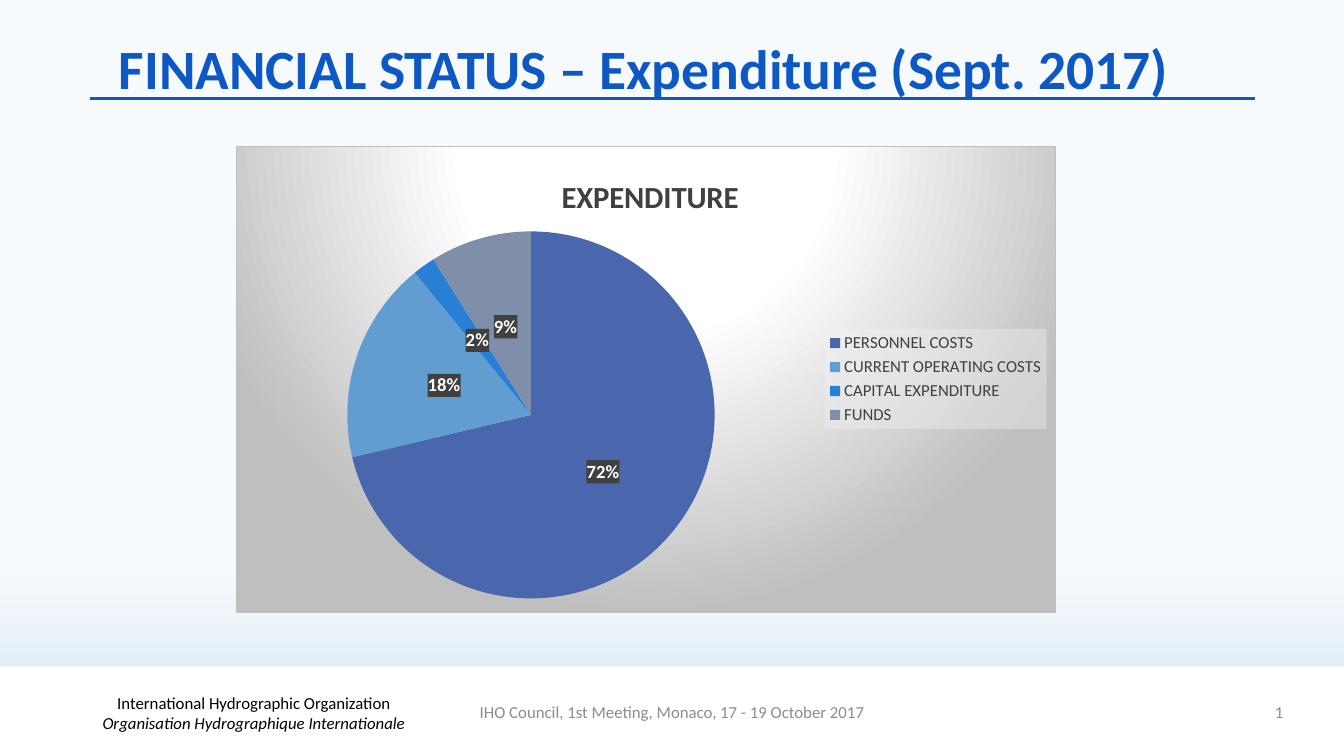
from lxml import etree
from pptx import Presentation
from pptx import util as u
from pptx.chart.data import CategoryChartData
from pptx.dml.color import RGBColor
from pptx.enum import chart as ch, shapes, text
from pptx.oxml import ns, parse_xml

Pt = u.Pt

# Content
TITLE = "FINANCIAL STATUS – Expenditure (Sept. 2017)"
CHART_TITLE = "EXPENDITURE"
EXPENDITURE = [  # category, percent, colour
    ("PERSONNEL COSTS", 72, "4A66AC"),
    ("CURRENT OPERATING COSTS", 18, "629DD1"),
    ("CAPITAL EXPENDITURE", 2, "297FD5"),
    ("FUNDS ", 9, "7F8FA9"),
]
ORGANIZATION = [("International Hydrographic Organization\v", False),
                ("Organisation Hydrographique Internationale", True)]
MEETING = [("IHO Council, 1st Meeting, Monaco, 17 - 19 October 2017", False)]
PAGE_NUMBER = "3"

THEME = {
    "font": "Calibri", "blue": "0E58C4", "white": "FFFFFF", "black": "000000",
    "grey": "8C8C8C", "dark": "404040", "silver": "BFBFBF", "pale": "F2F2F2",
    "sky": [(0.75, "F7FAFD"), (1, "D0E2F1")],
    "title": 39.6, "chart_title": 22, "label": 13.3, "small": 12, "base": 10,
}

# Positions: left, top, width, height
SLIDE = (960, 540)
TITLE_BOX = (77.76, 32.4, 828, 42.5)
CHART_BOX = (168.5, 104.4, 586, 333.4)
FOOTER_BAND = (0, 475.9, 960, 66.2)
ORGANIZATION_BOX = (19.4, 494.6, 324, 28.8)
MEETING_BOX = (318.2, 493.9, 324, 28.8)
NUMBER_BOX = (707.8, 493.9, 216, 28.8)
RULE = (64.1, 70.6, 896.4, 70.6)

# Shares of the chart area
TITLE_LAYOUT = {"x": 0.39, "y": 0.05}
PIE_LAYOUT = {"x": 0.135, "y": 0.182, "w": 0.449, "h": 0.788}
LEGEND_LAYOUT = {"x": 0.718, "y": 0.392, "w": 0.271, "h": 0.214}


def points(values):
    return [Pt(value) for value in values]


def rgb(name):
    return RGBColor.from_string(THEME.get(name, name))


def set_all(target, values):
    for name, value in values.items():
        setattr(target, name, value)


def style_font(font, size, colour, **extra):
    set_all(font, {"name": THEME["font"], "size": Pt(size), **extra})
    font.color.rgb = rgb(colour)


def chart_fill(content):
    return parse_xml(f'<c:spPr {ns.nsdecls("c", "a")}>{content}</c:spPr>')


def solid(colour, alpha):
    return (f'<a:solidFill><a:srgbClr val="{THEME[colour]}">'
            f'<a:alpha val="{alpha * 1000}"/></a:srgbClr></a:solidFill>')


def place(part, layout, inner=False):
    """Give a chart part a manual layout."""
    old = part.find(ns.qn("c:layout"))
    target = '<c:layoutTarget val="inner"/>' if inner else ""
    modes = "".join(f'<c:{key}Mode val="edge"/>' for key in "xy")
    sizes = "".join(f'<c:{key} val="{value}"/>' for key, value in layout.items())
    new = parse_xml(f'<c:layout {ns.nsdecls("c")}><c:manualLayout>{target}{modes}'
                    f'{sizes}</c:manualLayout></c:layout>')
    if old is not None:
        part.replace(old, new)
        return
    before = part.find(ns.qn("c:tx"))
    if before is None:
        before = part.find(ns.qn("c:legendPos"))
    if before is None:
        part.insert(0, new)
    else:
        before.addnext(new)


def add_text(page, box_at, spans, colour, align):
    box = page.shapes.add_textbox(*points(box_at))
    set_all(box.text_frame, {"word_wrap": True,
                             "vertical_anchor": text.MSO_ANCHOR.MIDDLE})
    para = box.text_frame.paragraphs[0]
    para.alignment = align
    for words, italic in spans:
        line, *broken = words.split("\v")
        span = para.add_run()
        span.text = line
        style_font(span.font, THEME["small"], colour, italic=italic)
        if broken:
            para.add_line_break()
    return para


deck = Presentation()
deck.slide_width, deck.slide_height = points(SLIDE)
page = deck.slides.add_slide(deck.slide_layouts[5])

# Background
sky = page.background.fill
sky.gradient()
sky.gradient_angle = 270
for stop, (position, colour) in zip(sky.gradient_stops, THEME["sky"]):
    stop.position = position
    stop.color.rgb = rgb(colour)

# Rule under the title
rule = page.shapes.add_connector(shapes.MSO_CONNECTOR.STRAIGHT, *points(RULE))
rule.line.color.rgb = rgb("blue")
rule.line.width = Pt(2.25)
etree.SubElement(rule._element.spPr, ns.qn("a:effectLst"))

# Footer
band = page.shapes.add_shape(shapes.MSO_SHAPE.RECTANGLE, *points(FOOTER_BAND))
band.shadow.inherit = False
band.fill.solid()
band.fill.fore_color.rgb = rgb("white")
band.line.fill.background()
add_text(page, ORGANIZATION_BOX, ORGANIZATION, "black", text.PP_ALIGN.CENTER)
add_text(page, MEETING_BOX, MEETING, "grey", text.PP_ALIGN.CENTER)
number = add_text(page, NUMBER_BOX, [(PAGE_NUMBER, False)], "grey", text.PP_ALIGN.RIGHT)
run = number.runs[0]._r
field = etree.Element(ns.qn("a:fld"), type="slidenum",
                      id="{B6F15528-21DE-4FAA-801E-634DDDAF4B2B}")
run.addprevious(field)
field.extend(list(run))
number._p.remove(run)

# Title
title = page.shapes.title
set_all(title, dict(zip(("left", "top", "width", "height"), points(TITLE_BOX))))
title.text_frame.text = TITLE
set_all(title.text_frame, {"word_wrap": True, "auto_size": text.MSO_AUTO_SIZE.NONE,
                           "vertical_anchor": text.MSO_ANCHOR.MIDDLE})
para = title.text_frame.paragraphs[0]
set_all(para, {"alignment": text.PP_ALIGN.LEFT, "line_spacing": 0.7})
style_font(para.runs[0].font, THEME["title"], "blue", bold=True)

# Pie chart
data = CategoryChartData()
data.categories = [name for name, _, _ in EXPENDITURE]
data.add_series("Series 1", [share for _, share, _ in EXPENDITURE])
chart = page.shapes.add_chart(ch.XL_CHART_TYPE.PIE, *points(CHART_BOX), data).chart
style_font(chart.font, THEME["base"], "black")
plot = chart.plots[0]
plot.vary_by_categories = True
for index, (_, _, colour) in enumerate(EXPENDITURE):
    slice_fill = plot.series[0].points[index].format.fill
    slice_fill.solid()
    slice_fill.fore_color.rgb = rgb(colour)

# Chart title, legend and labels
chart.has_title = True
chart.chart_title.text_frame.text = CHART_TITLE
style_font(chart.chart_title.text_frame.paragraphs[0].runs[0].font,
           THEME["chart_title"], "dark", bold=True)
chart.has_legend = True
set_all(chart.legend, {"position": ch.XL_LEGEND_POSITION.RIGHT,
                       "include_in_layout": False})
style_font(chart.legend.font, THEME["small"], "dark")
labels = plot.series[0].data_labels
set_all(labels, {"show_value": True, "number_format": '0"%"',
                 "number_format_is_linked": False,
                 "position": ch.XL_LABEL_POSITION.CENTER})
style_font(labels.font, THEME["label"], "white", bold=True)

# Chart fills and layout
stops = "".join(f'<a:gs pos="{at}000"><a:srgbClr val="{THEME[colour]}"/></a:gs>'
                for at, colour in ((0, "white"), (39, "white"), (100, "silver")))
area_fill = (f'<a:gradFill><a:gsLst>{stops}</a:gsLst><a:path path="circle">'
             '<a:fillToRect l="50000" t="-80000" r="50000" b="180000"/></a:path></a:gradFill>'
             f'<a:ln w="9525">{solid("silver", 100)}</a:ln>')
space = chart._chartSpace
for part, content in ((space, area_fill),
                      (chart.legend._element, solid("pale", 39)),
                      (labels._element, solid("dark", 90))):
    part.find(ns.qn("c:txPr")).addprevious(chart_fill(content))
place(chart.chart_title._element, TITLE_LAYOUT)
place(chart.legend._element, LEGEND_LAYOUT)
place(space.chart.plotArea, PIE_LAYOUT, inner=True)

deck.save("out.pptx")
